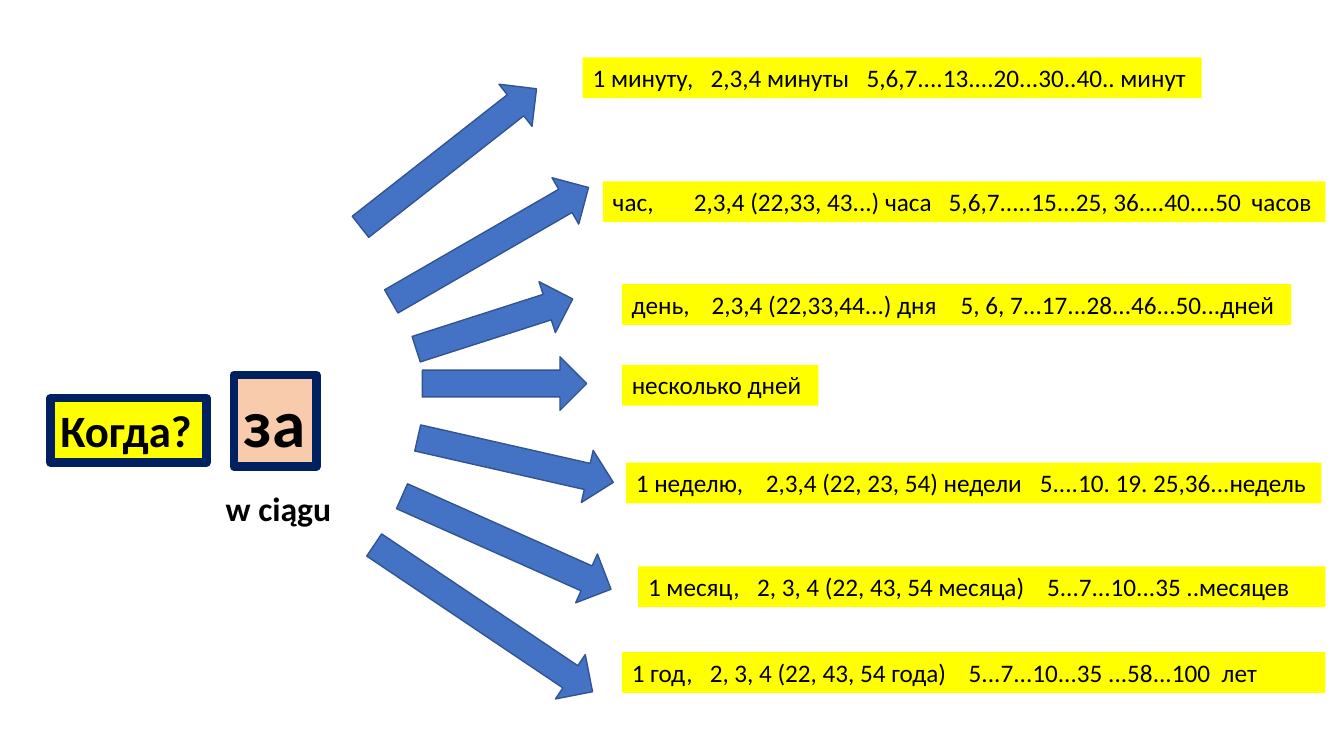
"""Build a slide on Russian time expressions with the preposition «за»."""
import pptx
import pptx.dml.color
import pptx.enum.shapes
import pptx.enum.text
import pptx.oxml
import pptx.oxml.ns
import pptx.util

Pt = pptx.util.Pt
SHAPE = pptx.enum.shapes.MSO_SHAPE

COLORS = {
    "text": "000000",
    "yellow": "FFFF00",
    "peach": "F8CBAD",
    "navy": "002060",
    "arrow": "4472C4",
    "arrow_line": "325491",
}

ARROW_HEIGHT = 38.2
ROW_HEIGHT = 29.1

ARROWS = [
    (240.5, 93.6, 159.8, 321.9, 0.5),
    (268.6, 155.5, 162.7, 330, 0.5),
    (294.5, 212.4, 117.4, 342.2, 0.5),
    (301.7, 254.9, 117.4, 0, 0.5),
    (296.6, 309.6, 143.3, 12.8, 0.5),
    (280.1, 368.6, 163.4, 24, 0.51),
    (251.3, 422.6, 187.9, 33.9, 0.5),
]

ROWS = [
    (416.2, 41, 442.1, ["1 минуту,", "2,3,4 минуты", "5,6,7....13....20...30..40.. минут"], [84.3, 195.7]),
    (430.6, 129.6, 516.2,
     ["час,", "2,3,4 (22,33, 43...) часа", "5,6,7.....15...25, 36....40....50", "часов"],
     [57.9, 240, 456.4]),
    (444.2, 203, 478.1,
     ["день,", "2,3,4 (22,33,44...) дня", "5, 6, 7...17...28...46...50...дней"], [57.1, 235]),
    (444.2, 260.6, 140.4, ["несколько дней"], []),
    (447.1, 330.5, 496.8,
     ["1 неделю,", "2,3,4 (22, 23, 54) недели", "5....10. 19. 25,36...недель"], [92.9, 288.6]),
    (455.8, 404.6, 491,
     ["1 месяц,", "2, 3, 4 (22, 43, 54 месяца)", "5...7...10...35 ..месяцев"], [77.9, 285]),
    (444.2, 465.8, 502.6,
     ["1 год,", "2, 3, 4 (22, 43, 54 года)", "5...7...10...35 ...58...100", "лет"],
     [55.7, 240.7, 421.4]),
]


def rgb(name):
    """Return the named colour."""
    return pptx.dml.color.RGBColor.from_string(COLORS[name])


def set_tabs(p, stops):
    """Give a paragraph left tab stops, in points."""
    tabs = pptx.oxml.parse_xml("<a:tabLst %s/>" % pptx.oxml.ns.nsdecls("a"))
    for stop in stops:
        tab = tabs.makeelement(pptx.oxml.ns.qn("a:tab"), {"pos": str(Pt(stop)), "algn": "l"})
        tabs.append(tab)
    p._p.get_or_add_pPr().append(tabs)


def add_text(s, text, x, y, w, h, size=18, bold=False, fill=None, line=None, tabs=(), wrap=True):
    """Add a text box with optional fill, outline and tab stops."""
    sp = s.shapes.add_textbox(Pt(x), Pt(y), Pt(w), Pt(h))
    if fill:
        sp.fill.solid()
        sp.fill.fore_color.rgb = rgb(fill)
    if line:
        sp.line.color.rgb = rgb(line)
        sp.line.width = Pt(6)
    tf = sp.text_frame
    tf.word_wrap = wrap
    tf.auto_size = pptx.enum.text.MSO_AUTO_SIZE.SHAPE_TO_FIT_TEXT
    p = tf.paragraphs[0]
    if tabs:
        set_tabs(p, tabs)
    r = p.add_run()
    r.text = text
    r.font.name = "Calibri"
    r.font.size = Pt(size)
    r.font.bold = bold
    r.font.color.rgb = rgb("text")
    return sp


def add_arrow(s, x, y, w, rotation, shaft):
    """Add a rotated block arrow."""
    sp = s.shapes.add_shape(SHAPE.RIGHT_ARROW, Pt(x), Pt(y), Pt(w), Pt(ARROW_HEIGHT))
    sp.adjustments[0] = shaft
    sp.rotation = rotation
    sp.shadow.inherit = False
    sp.fill.solid()
    sp.fill.fore_color.rgb = rgb("arrow")
    sp.line.color.rgb = rgb("arrow_line")
    sp.line.width = Pt(1)
    return sp


def main():
    """Create the slide and save it."""
    prs = pptx.Presentation()
    prs.slide_width, prs.slide_height = Pt(960), Pt(540)
    s = prs.slides.add_slide(prs.slide_layouts[6])
    add_text(s, "за", 167, 267.8, 59, 65.5, size=48, bold=True, fill="peach", line="navy", wrap=False)
    add_text(s, "Когда?", 36, 284.4, 111.6, 46.1, size=32, bold=True, fill="yellow", line="navy")
    for arrow in ARROWS:
        add_arrow(s, *arrow)
    for x, y, w, parts, tabs in ROWS:
        add_text(s, "\t".join(parts), x, y, w, ROW_HEIGHT, fill="yellow", tabs=tabs)
    add_text(s, "w ciągu", 154.1, 344.9, 99.4, 36, size=24, bold=True)
    prs.save("out.pptx")


if __name__ == "__main__":
    main()
